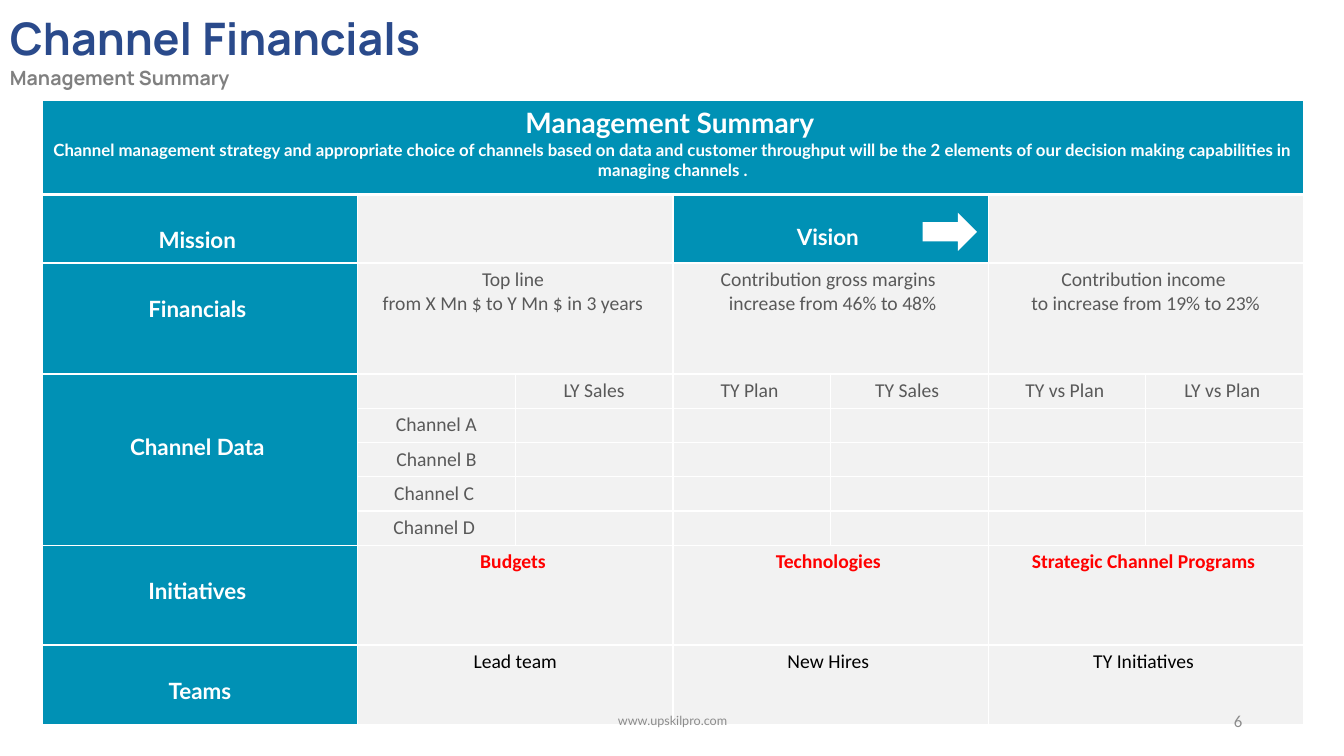
from lxml import etree
from pptx import Presentation
from pptx.dml.color import RGBColor
from pptx.enum.shapes import MSO_SHAPE
from pptx.enum.text import MSO_ANCHOR, PP_ALIGN
from pptx.oxml.ns import qn
from pptx.util import Inches, Pt

CENTER, LEFT, RIGHT = PP_ALIGN.CENTER, PP_ALIGN.LEFT, PP_ALIGN.RIGHT
TOP, MIDDLE = MSO_ANCHOR.TOP, MSO_ANCHOR.MIDDLE
ARROW = MSO_SHAPE.RIGHT_ARROW

TEAL, PALE, WHITE = "0091B5", "F2F2F2", "FFFFFF"
DARK_GRAY, FOOTER_GRAY, RED, BLACK = "595959", "8C8C8C", "FF0000", "000000"

TABLE_WIDTH = 12.51
DATA_WIDTH = TABLE_WIDTH / 8
ROW_HEIGHTS = [0.93, 0.68, 1.1] + [0.34] * 5 + [0.99, 0.79]
WIDE_ROWS = (1, 2, 8, 9)
DATA_ROW = 3

# row, column, label, top margin
LABELS = [
    (1, 0, "Mission ", 0.32),
    (1, 3, "Vision ", 0.29),
    (2, 0, "Financials ", 0.32),
    (3, 0, "Channel Data ", 0.59),
    (8, 0, "Initiatives ", 0.32),
    (9, 0, "Teams", 0.32),
]
# row, texts of the three wide cells, colour, bold
WIDE_TEXTS = [
    (2, ["Top line \nfrom X Mn $ to Y Mn $ in 3 years ",
         "Contribution gross margins \n increase from 46% to 48%",
         "Contribution income \nto increase from 19% to 23%"], DARK_GRAY, False),
    (8, ["Budgets ", "Technologies ", "Strategic Channel Programs "], RED, True),
    (9, ["Lead team", "New Hires ", "TY Initiatives "], BLACK, False),
]
DATA_HEADS = ["LY Sales", "TY Plan ", "TY Sales ", "TY vs Plan ", "LY vs Plan "]
CHANNELS = ["Channel A", "Channel B", "Channel C ", "Channel D "]
SUMMARY = ("Channel management strategy and appropriate choice of channels based on data "
           "and customer throughput will be the 2 elements of our decision making "
           "capabilities in managing channels .")


def color(value):
    return RGBColor.from_string(value)


def style_font(font, name, size, value, bold=False):
    font.name, font.size, font.bold = name, Pt(size), bold
    font.color.rgb = color(value)


def style_para(para, name, size, value, bold=False, align=CENTER):
    para.alignment = align
    for span in para.runs:
        style_font(span.font, name, size, value, bold)


def add_text(page, area, text, name, size, value, bold=False, align=LEFT, anchor=TOP):
    box = page.shapes.add_textbox(*map(Inches, area))
    frame = box.text_frame
    frame.word_wrap = True
    frame.vertical_anchor = anchor
    frame.text = text
    for para in frame.paragraphs:
        style_para(para, name, size, value, bold, align)
    return frame


def add_border(cell, side, width):
    line = etree.SubElement(cell._tc.get_or_add_tcPr(), qn("a:" + side), w=str(Pt(width)))
    fill = etree.SubElement(line, qn("a:solidFill"))
    etree.SubElement(fill, qn("a:srgbClr"), val=WHITE)


def style_cell(cell, row, column):
    """Give a cell its borders and fill; an empty cell must not stretch its row."""
    heavy_side = {0: "lnB", 1: "lnT"}.get(row)
    for side in ("lnL", "lnR", "lnT", "lnB"):
        add_border(cell, side, 3 if side == heavy_side else 1)
    is_label = row == 0 or column == 0 or (row == 1 and column in (3, 4))
    cell.fill.solid()
    cell.fill.fore_color.rgb = color(TEAL if is_label else PALE)
    cell.margin_top = cell.margin_bottom = 0


def write_cell(cell, text, name, size, value, bold=False, top=0.05):
    cell.margin_top, cell.margin_bottom = Inches(top), Inches(0.05)
    cell.text = text
    for para in cell.text_frame.paragraphs:
        style_para(para, name, size, value, bold)


def add_grid(page):
    frame = page.shapes.add_table(
        len(ROW_HEIGHTS), 7, Inches(0.42), Inches(1),
        Inches(TABLE_WIDTH), Inches(sum(ROW_HEIGHTS)))
    table = frame.table
    table.first_row = table.horz_banding = False
    for index, column in enumerate(table.columns):
        column.width = Inches(DATA_WIDTH * (1 if index else 2))
    for row, height in zip(table.rows, ROW_HEIGHTS):
        row.height = Inches(height)
    for row in range(len(ROW_HEIGHTS)):
        for column in range(7):
            style_cell(table.cell(row, column), row, column)

    table.cell(0, 0).merge(table.cell(0, 6))
    table.cell(DATA_ROW, 0).merge(table.cell(DATA_ROW + 4, 0))
    for row in WIDE_ROWS:
        for column in (1, 3, 5):
            table.cell(row, column).merge(table.cell(row, column + 1))
    return table


def fill_grid(table):
    heading = table.cell(0, 0)
    write_cell(heading, "Management Summary \n" + SUMMARY, "Lato", 12, WHITE, True)
    style_para(heading.text_frame.paragraphs[0], "Lato", 20, WHITE, True)
    for row, column, label, top in LABELS:
        write_cell(table.cell(row, column), label, "Lato", 16, WHITE, True, top)
    for row, texts, value, bold in WIDE_TEXTS:
        for column, text in zip((1, 3, 5), texts):
            write_cell(table.cell(row, column), text, "Calibri", 14, value, bold)
    for column, text in enumerate(DATA_HEADS, 2):
        write_cell(table.cell(DATA_ROW, column), text, "Calibri", 14, DARK_GRAY)
    for row, text in enumerate(CHANNELS, DATA_ROW + 1):
        write_cell(table.cell(row, 1), text, "Calibri", 14, DARK_GRAY)


def add_title(page):
    frame = add_text(page, (0, 0, 7.71, 0.94), "\nManagement Summary",
                     "Manrope", 14, "808080", True)
    for text, size in (("Channel", 32), (" ", 36), ("Financials", 32)):
        span = frame.paragraphs[0].add_run()
        span.text = text
        style_font(span.font, "Manrope", size, "2A4A8B", True)


def add_vision_arrow(page):
    arrow = page.shapes.add_shape(ARROW, *map(Inches, (9.15, 2.11, 0.54, 0.38)))
    arrow.shadow.inherit = False
    arrow.fill.solid()
    arrow.fill.fore_color.rgb = color(WHITE)
    arrow.line.fill.background()


def main():
    deck = Presentation()
    deck.slide_width, deck.slide_height = Inches(13.33), Inches(7.5)
    page = deck.slides.add_slide(deck.slide_layouts[6])
    fill_grid(add_grid(page))
    add_title(page)
    add_text(page, (9.42, 6.95, 3, 0.4), "6", "Calibri", 12, FOOTER_GRAY,
             align=RIGHT, anchor=MIDDLE)
    add_text(page, (4.42, 6.95, 4.5, 0.4), "www.upskilpro.com", "Lato", 9, FOOTER_GRAY,
             align=CENTER, anchor=MIDDLE)
    add_vision_arrow(page)
    deck.save("out.pptx")


if __name__ == "__main__":
    main()
